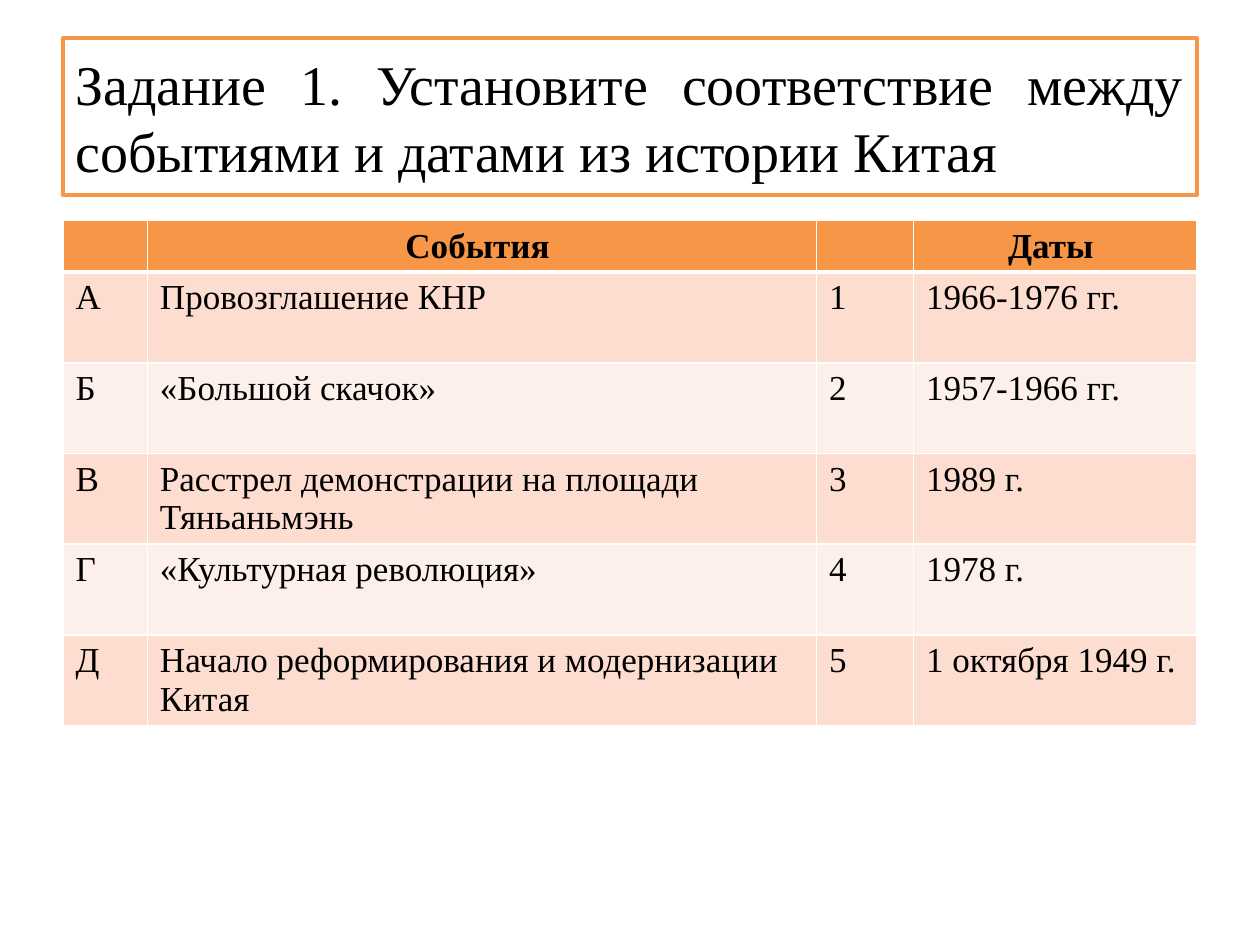
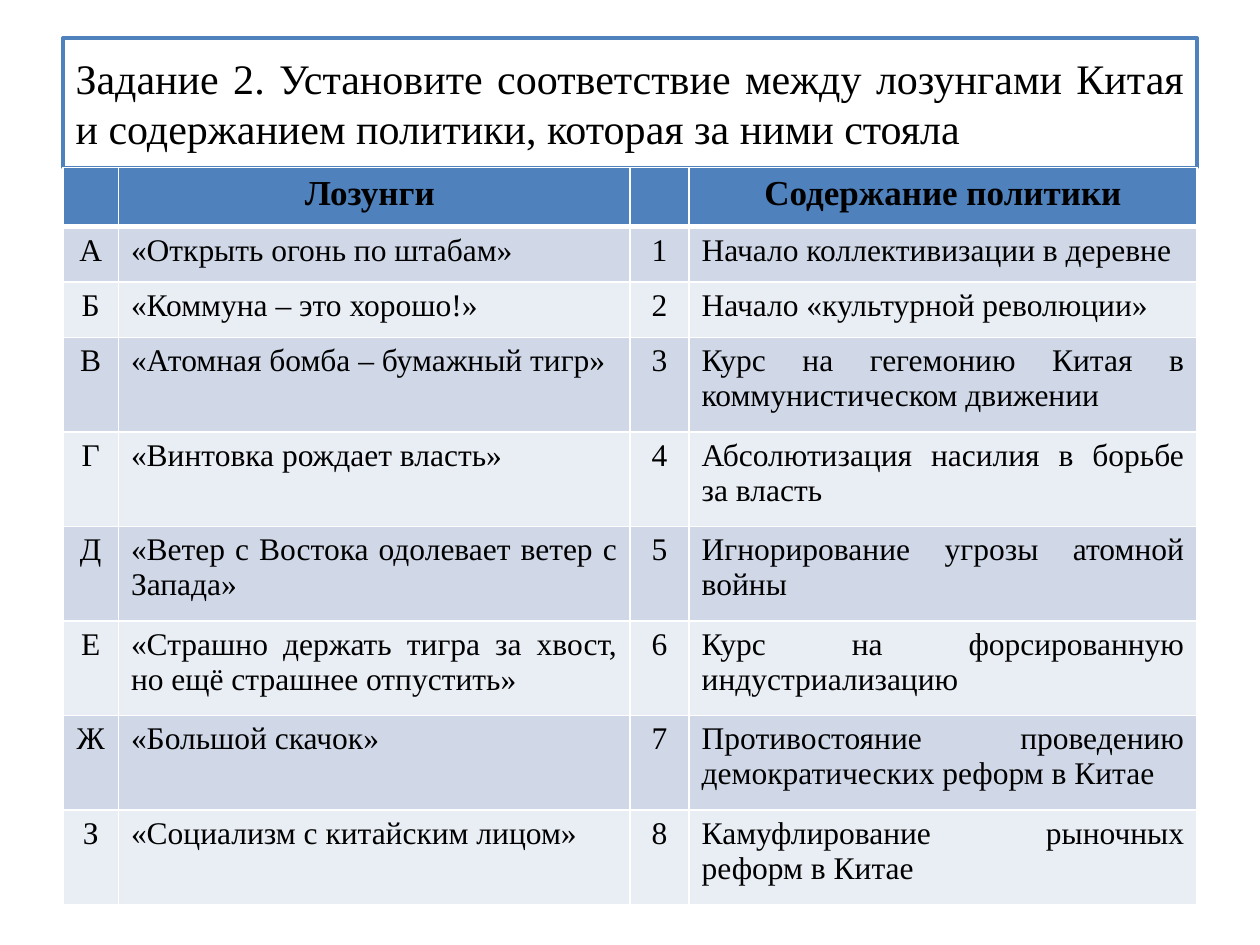
from lxml import etree
from pptx import Presentation
from pptx.dml.color import RGBColor
from pptx.enum.text import MSO_ANCHOR, MSO_AUTO_SIZE, PP_ALIGN
from pptx.oxml.ns import qn
from pptx.util import Inches, Pt

LEFT, CENTER, JUSTIFY = PP_ALIGN.LEFT, PP_ALIGN.CENTER, PP_ALIGN.JUSTIFY
MIDDLE = MSO_ANCHOR.MIDDLE
NO_AUTOFIT = MSO_AUTO_SIZE.NONE

FONT = "Times New Roman"
WHITE = RGBColor(0xFF, 0xFF, 0xFF)
BLACK = RGBColor(0x00, 0x00, 0x00)
ORANGE = RGBColor(0xF7, 0x96, 0x46)
ORANGE_BANDS = RGBColor(0xFC, 0xDD, 0xCF), RGBColor(0xFD, 0xEF, 0xE9)
BLUE = RGBColor(0x4F, 0x81, 0xBD)
BLUE_BANDS = RGBColor(0xD0, 0xD8, 0xE8), RGBColor(0xE9, 0xED, 0xF4)

SIDE, WIDTH, TITLE_TOP = 0.5, 9, 0.3
HEADER_SIZE = 20
TITLE_ONLY = 5

EVENTS = [
    ("", "События ", "", "Даты "),
    ("А", "Провозглашение КНР", "1", "1966-1976 гг."),
    ("Б", "«Большой скачок»", "2", "1957-1966 гг."),
    ("В", "Расстрел демонстрации на площади Тяньаньмэнь", "3", "1989 г."),
    ("Г", "«Культурная революция»", "4", "1978 г."),
    ("Д", "Начало реформирования и модернизации Китая", "5", "1 октября 1949 г."),
]
SLOGANS = [
    ("", "Лозунги ", "", "Содержание политики"),
    ("А", "«Открыть огонь по штабам»", "1", "Начало коллективизации в деревне"),
    ("Б", "«Коммуна – это хорошо!»", "2", "Начало «культурной революции»"),
    ("В", "«Атомная бомба – бумажный тигр»", "3",
     "Курс на гегемонию Китая в коммунистическом движении"),
    ("Г", "«Винтовка рождает власть»", "4", "Абсолютизация насилия в борьбе за власть"),
    ("Д", "«Ветер с Востока одолевает ветер с Запада»", "5",
     "Игнорирование угрозы атомной войны"),
    ("Е", "«Страшно держать тигра за хвост, но ещё страшнее отпустить»", "6",
     "Курс на форсированную индустриализацию"),
    ("Ж", "«Большой скачок»", "7",
     "Противостояние проведению демократических реформ в Китае"),
    ("З", "«Социализм с китайским лицом»", "8", "Камуфлирование рыночных реформ в Китае"),
]


class TaskPage:
    def __init__(self, deck, accent, bands):
        self.page = deck.slides.add_slide(deck.slide_layouts[TITLE_ONLY])
        self.accent = accent
        self.bands = bands

    def add_text(self, frame, text, size, align, bold=False):
        para = frame.paragraphs[0]
        para.alignment = align
        span = para.add_run()
        span.text = text
        span.font.name = FONT
        span.font.size = Pt(size)
        span.font.bold = bold
        span.font.color.rgb = BLACK

    def title(self, text, size, height):
        box = self.page.shapes.title
        box.left, box.top = Inches(SIDE), Inches(TITLE_TOP)
        box.width, box.height = Inches(WIDTH), Inches(height)
        box.fill.solid()
        box.fill.fore_color.rgb = WHITE
        box.line.color.rgb = self.accent
        box.line.width = Pt(2)
        frame = box.text_frame
        frame.word_wrap = True
        frame.auto_size = NO_AUTOFIT
        frame.vertical_anchor = MIDDLE
        self.add_text(frame, text, size, JUSTIFY)

    def borders(self, cell, top, bottom):
        properties = cell._tc.get_or_add_tcPr()
        for side, width in (("L", 1), ("R", 1), ("T", top), ("B", bottom)):
            line = etree.SubElement(properties, qn("a:ln" + side), w=str(Pt(width)))
            fill = etree.SubElement(line, qn("a:solidFill"))
            etree.SubElement(fill, qn("a:srgbClr"), val=str(WHITE))

    def table(self, rows, top, widths, heights, size, aligns):
        table = self.page.shapes.add_table(
            len(rows), len(widths), Inches(SIDE), Inches(top),
            Inches(WIDTH), Inches(sum(heights))).table
        for column, width in zip(table.columns, widths):
            column.width = Inches(width)
        for row, height in zip(table.rows, heights):
            row.height = Inches(height)
        for row_index, texts in enumerate(rows):
            header = row_index == 0
            color = self.accent if header else self.bands[(row_index - 1) % 2]
            for column_index, text in enumerate(texts):
                cell = table.cell(row_index, column_index)
                self.borders(cell, 3 if row_index == 1 else 1, 3 if header else 1)
                cell.fill.solid()
                cell.fill.fore_color.rgb = color
                if text:
                    self.add_text(cell.text_frame, text,
                                  HEADER_SIZE if header else size,
                                  CENTER if header else aligns[column_index % 2],
                                  header)


def main():
    deck = Presentation()
    deck.slide_width, deck.slide_height = Inches(10), Inches(7.5)

    events = TaskPage(deck, ORANGE, ORANGE_BANDS)
    events.title("Задание 1. Установите соответствие между событиями и датами "
                 "из истории Китая", 32, 1.25)
    events.table(EVENTS, 1.75, (0.67, 5.31, 0.77, 2.25),
                 [0.41] + [0.72] * 5, 20, (LEFT, LEFT))

    slogans = TaskPage(deck, BLUE, BLUE_BANDS)
    slogans.title("Задание 2. Установите соответствие между лозунгами Китая "
                  "и содержанием политики, которая за ними стояла", 24, 1.03)
    slogans.table(SLOGANS, 1.33, (0.44, 4.06, 0.47, 4.03),
                  [0.47] + [0.44] * 2 + [0.75] * 6, 18, (CENTER, JUSTIFY))

    deck.save("out.pptx")


if __name__ == "__main__":
    main()
